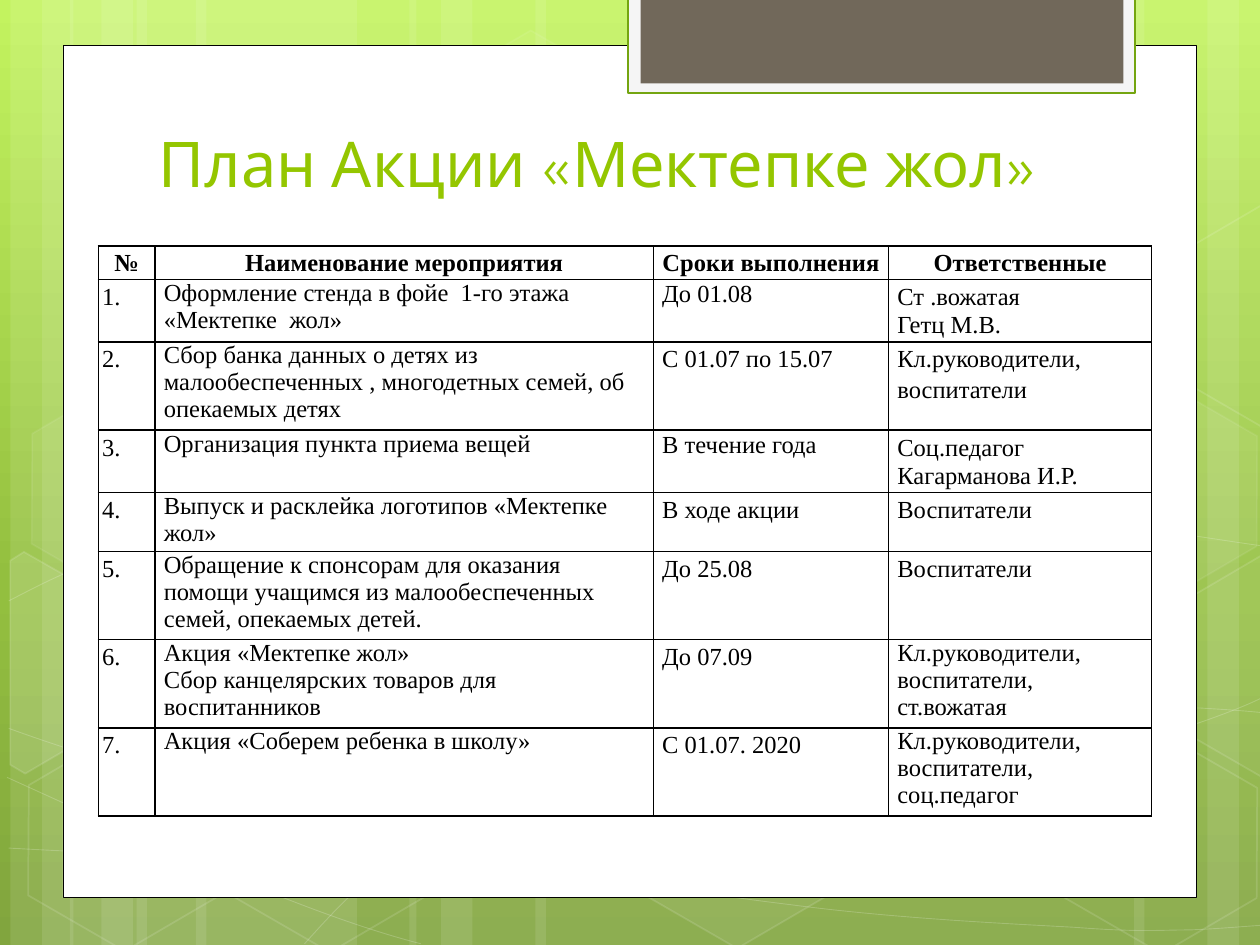
from copy import deepcopy
from itertools import cycle
from lxml.etree import SubElement as Sub
from pptx import Presentation as Deck
from pptx.dml.color import RGBColor as RGB
from pptx.enum.shapes import MSO_SHAPE as Form
from pptx.enum.text import MSO_ANCHOR as Anchor, PP_ALIGN as Align
from pptx.oxml.ns import qn
from pptx.util import Pt

WHITE = RGB(0xFF, 0xFF, 0xFF)
BLACK = RGB(0, 0, 0)
SMOKE = RGB(0xF5, 0xF5, 0xF5)
TAUPE = RGB(0x71, 0x68, 0x5A)
GREEN = RGB(0x74, 0xA5, 0x10)
LIME = RGB(0x94, 0xC6, 0x00)
SKY = [(0, RGB(0xC3, 0xF3, 0x5F)), (0.62, RGB(0x93, 0xBF, 0x3F)), (1, RGB(0x81, 0xA5, 0x3E))]

BANDS = [(78, 126), (6, 36), (24, 60), (112, 126), (40, 36), (58, 60),
         (528, 126), (690, 36), (648, 60), (306, 222), (234, 36), (252, 60)]

WAVES = [
    [(5, 484.6), (44, 486.7), (83, 488.9), (137, 488.2), (191, 487.4), (258, 486), (330, 478.8),
     (402, 471.6), (504, 457.9), (570, 444.2), (636, 430.6), (703, 409), (725, 396.7)],
    [(5, 343.4), (26, 332.6), (47, 321.1), (87, 310.3), (128, 298.8), (187, 283.7), (250, 278.6),
     (314, 273.6), (392, 272.9), (471, 278.6), (550, 284.4), (682, 306.7), (725, 312.5)],
    [(4, 444.2), (91, 483.8), (178, 523.4), (240.5, 539.3)],
    [(5, 416.2), (27, 424.1), (50, 432), (92, 443.5), (134, 454.3), (197, 472.3), (257, 484.6),
     (317, 496.8), (392, 509.8), (452, 517), (512, 524.9), (576, 527.8), (614, 529.9),
     (652, 532.8), (662, 531.4), (680, 531.4), (699, 530.6), (712, 529.2), (725, 528.5)],
    [(174, 539.3), (187, 524.9), (200, 510.5), (217, 497.5), (235, 484.6), (259, 470.2), (279, 460.1),
     (299, 450), (312, 445.7), (338, 438.5), (364, 431.3), (413, 421.2), (438, 416.2),
     (464, 411.1), (467, 411.1), (490, 409.7), (512, 407.5), (547, 405.4), (572, 404.6),
     (597, 403.9), (638, 404.6), (638, 404.6), (654, 404.6), (670, 404.6), (686, 404.6),
     (699, 405.4), (711, 406.1), (724, 407.5)],
]

CELLS = [(240.5, 26, 4, 8), (358, 424, 6, 12), (8, 425.5, 0, 12), (10, 224.6, 7, 8),
         (125.3, 426.2, 0, 12), (542, 326.2, 10, 12), (600.5, 427, 0, 12), (600.5, 226, 7, 8)]

CUTS = [
    ([(5.8, 320.4), (13.7, 315.4), (69.1, 347), (68.4, 410.4), (14.4, 442.1), (5.8, 437)], 10),
    ([(666.7, 349.2), (720.7, 317.5), (726.5, 321.1), (726.5, 441.4), (721.4, 444.2), (666.7, 412.6)], 4),
    ([(666.7, 149), (720.7, 117.4), (727, 121), (726.5, 241.2), (721.4, 244.1), (666.7, 212.4)], 0),
]

COLS = [32.4, 284.8, 134.4, 150.3]
TALL = [16.6, 16.6, 32.4, 16.6, 32.4, 32.4, 40.3, 24.5]
ROWS = [
    ["№", "Наименование мероприятия", "Сроки выполнения", "Ответственные"],
    ["1.", "Оформление стенда в фойе  1-го этажа «Мектепке  жол»", "До 01.08", "Ст .вожатая\nГетц М.В."],
    ["2.", "Сбор банка данных о детях из малообеспеченных , многодетных семей, об опекаемых детях",
     "С 01.07 по 15.07", "Кл.руководители,\nвоспитатели"],
    ["3.", "Организация пункта приема вещей", "В течение года", "Соц.педагог\nКагарманова И.Р."],
    ["4.", "Выпуск и расклейка логотипов «Мектепке жол»", "В ходе акции", "Воспитатели"],
    ["5.", "Обращение к спонсорам для оказания помощи учащимся из малообеспеченных семей, опекаемых детей.",
     "До 25.08", "Воспитатели"],
    ["6.", "Акция «Мектепке жол»\nСбор канцелярских товаров для воспитанников", "До 07.09",
     "Кл.руководители, воспитатели, ст.вожатая"],
    ["7.", "Акция «Соберем ребенка в школу»", "С 01.07. 2020", "Кл.руководители, воспитатели, соц.педагог"],
]
WIDE, TIGHT = 1.15, Pt(16.2)
GAPS = {(1, 2): [TIGHT], (3, 2): [TIGHT], (1, 3): [WIDE, TIGHT], (3, 3): [WIDE, TIGHT],
        (6, 3): [1.0], (7, 3): [1.0]}


def put(thing, **vals):
    for key, val in vals.items():
        setattr(thing, key, val)


def fade(fill, tone, part):
    fill.solid()
    fill.fore_color.rgb = tone
    if part < 100:
        node = fill._xPr.find(".//" + qn("a:srgbClr"))
        Sub(node, qn("a:alpha"), val=str(part * 1000))


class Page:
    head = {"name": "League Spartan", "size": Pt(36)}
    body = {"name": "Times New Roman", "size": Pt(14)}

    def __init__(self, slide):
        self.slide = slide
        self.shapes = slide.shapes

    def back(self, stops):
        fill = self.slide.background.fill
        fill.gradient()
        fill.gradient_angle = 270
        nodes = self.slide.element.find(".//" + qn("a:gsLst"))
        nodes.append(deepcopy(nodes[0]))
        for stop, (place, tone) in zip(fill.gradient_stops, stops):
            stop.position = place
            stop.color.rgb = tone

    def paint(self, shape, fill=None, part=100, line=None, width=1, dim=100):
        shape.shadow.inherit = False
        if fill is not None and part:
            fade(shape.fill, fill, part)
        else:
            shape.fill.background()
        if line is None:
            shape.line.fill.background()
        else:
            shape.line.width = Pt(width)
            fade(shape.line.fill, line, dim)

    def block(self, form, box, **look):
        shape = self.shapes.add_shape(form, *map(Pt, box))
        self.paint(shape, **look)
        return shape

    def hexa(self, left, top, part, dim):
        shape = self.block(Form.HEXAGON, (left, top, 126, 109.4), fill=WHITE, part=part, line=WHITE, dim=dim)
        shape.rotation = 30
        shape.adjustments[0] = 0.285
        shape.adjustments[1] = 1.155

    def trace(self, dots, close, **look):
        dots = [(Pt(x), Pt(y)) for x, y in dots]
        pen = self.shapes.build_freeform(*dots[0])
        pen.add_line_segments(dots[1:], close=close)
        shape = pen.convert_to_shape()
        self.paint(shape, **look)
        return shape

    def wave(self, knots):
        shape = self.trace(knots, False, line=WHITE, width=0.5, dim=20)
        track = shape.element.find(".//" + qn("a:path"))
        legs = track.findall(qn("a:lnTo"))
        for i, leg in enumerate(legs):
            if i % 3 == 0:
                arc = Sub(track, qn("a:cubicBezTo"))
            arc.append(leg[0])
            track.remove(leg)

    def text(self, para, words, font, tone, bold=False):
        run = para.add_run()
        run.text = words
        put(run.font, bold=bold, **font)
        run.font.color.rgb = tone

    def title(self, words, box):
        frame = self.shapes.add_textbox(*map(Pt, box)).text_frame
        put(frame, word_wrap=True, vertical_anchor=Anchor.BOTTOM)
        para = frame.paragraphs[0]
        para.alignment = Align.CENTER
        self.text(para, words, self.head, LIME)

    def cell(self, cell, words, gaps, side, first):
        put(cell, margin_left=Pt(side), margin_right=Pt(side), margin_top=0, margin_bottom=0,
            vertical_anchor=Anchor.TOP)
        props = cell._tc.get_or_add_tcPr()
        for edge in ("lnL", "lnR", "lnT", "lnB"):
            line = Sub(props, qn("a:" + edge), w=str(Pt(1)))
            Sub(Sub(line, qn("a:solidFill")), qn("a:srgbClr"), val=str(BLACK))
        cell.fill.background()
        frame = cell.text_frame
        for i, (part, gap) in enumerate(zip(words.split("\n"), cycle(gaps))):
            para = frame.add_paragraph() if i else frame.paragraphs[0]
            put(para, line_spacing=gap, alignment=Align.CENTER if first else Align.LEFT)
            self.text(para, part, self.body, BLACK, first)

    def table(self, left, top, height):
        box = map(Pt, (left, top, sum(COLS), height))
        frame = self.shapes.add_table(len(ROWS), len(COLS), *box)
        grid = frame.table
        put(grid, first_row=False, horz_banding=False)
        for col, width in zip(grid.columns, COLS):
            col.width = Pt(width)
        for r, (row, tall) in enumerate(zip(ROWS, TALL)):
            grid.rows[r].height = Pt(tall)
            for c, words in enumerate(row):
                gaps = GAPS.get((r, c), [1.0 if r and c == 1 else WIDE])
                side = 5 if r and c else 2.2
                self.cell(grid.cell(r, c), words, gaps, side, r == 0)
        frame.height = Pt(height)


def main():
    deck = Deck()
    put(deck, slide_width=Pt(720), slide_height=Pt(540))
    page = Page(deck.slides.add_slide(deck.slide_layouts[6]))
    page.back(SKY)
    for left, width in BANDS:
        page.block(Form.RECTANGLE, (left, 0, width, 540), fill=WHITE, part=10)
    for knots in WAVES:
        page.wave(knots)
    for spot in CELLS:
        page.hexa(*spot)
    for dots, part in CUTS:
        page.trace(dots, True, fill=WHITE, part=part, line=WHITE, dim=12)
    page.block(Form.RECTANGLE, (36, 25.9, 648, 487.2), fill=WHITE, line=BLACK, width=0.5)
    page.block(Form.RECTANGLE, (359, -1.4, 289.7, 54.7), fill=SMOKE, line=GREEN, width=1.25)
    page.block(Form.RECTANGLE, (366, -1.4, 276, 49), fill=TAUPE)
    page.title("План Акции «Мектепке жол»", (39.6, 28, 604, 90))
    page.table(56.2, 140.5, 324)
    deck.save("out.pptx")


if __name__ == "__main__":
    main()
